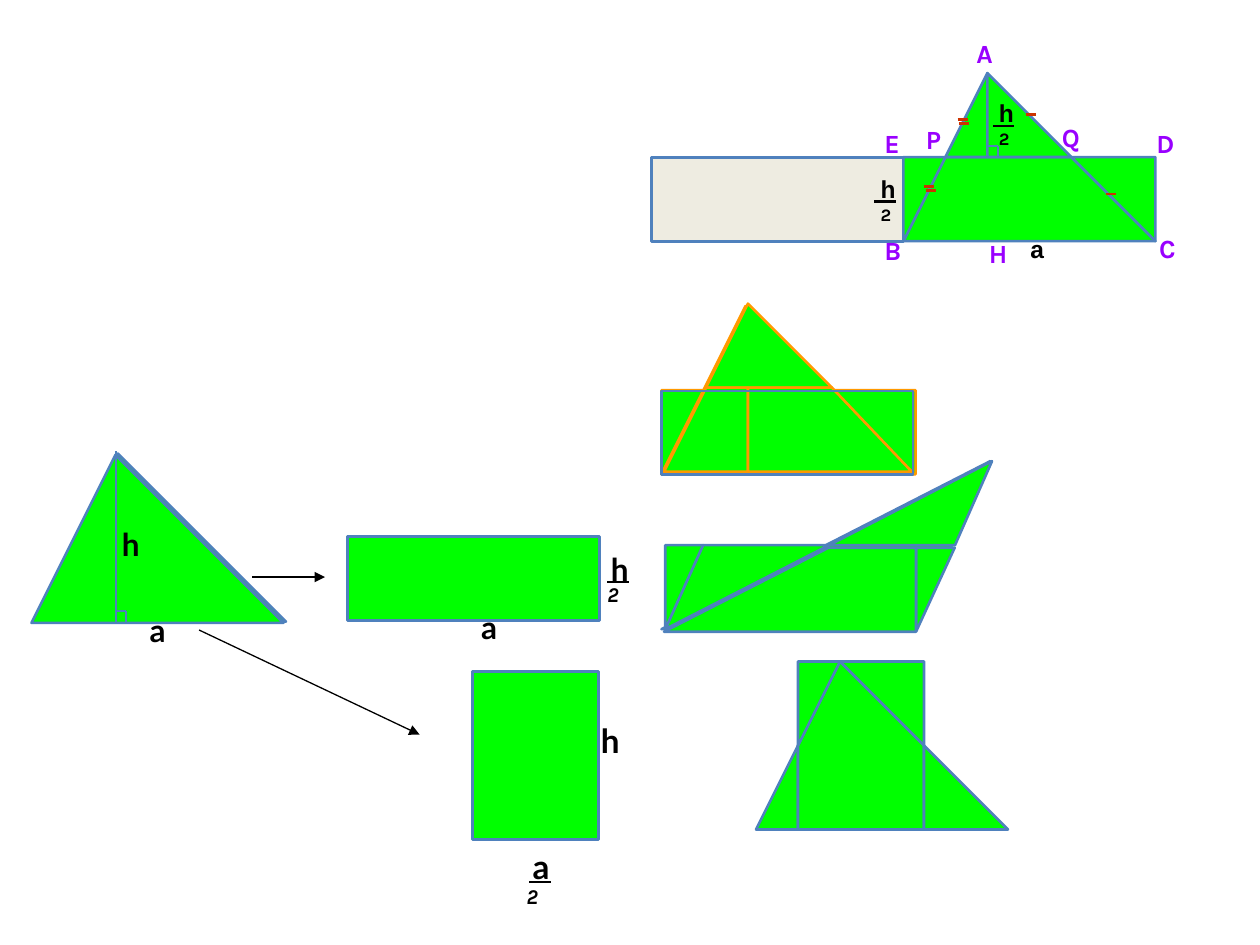
from lxml.etree import SubElement
from pptx import Presentation
from pptx.dml.color import RGBColor
from pptx.enum.shapes import MSO_CONNECTOR, MSO_SHAPE
from pptx.oxml.ns import qn
from pptx.util import Inches, Pt

GREEN = RGBColor(0x00, 0xFF, 0x00)
BLUE = RGBColor(0x4F, 0x81, 0xBD)
ORANGE = RGBColor(0xFF, 0x99, 0x00)
BEIGE = RGBColor(0xEE, 0xEC, 0xE1)
RUST = RGBColor(0xCC, 0x33, 0x00)
PURPLE = RGBColor(0x99, 0x00, 0xFF)
BLACK = RGBColor(0x00, 0x00, 0x00)

# Every figure is drawn on a grid of thirds of an inch: a = 6 cells, h = 4 cells
CELL = 1 / 3
TRIANGLE = [(0, 4), (2, 0), (6, 4)]

POINT_FONT = dict(name="Karla", size=Pt(15), bold=True)
SIDE_FONT = dict(name="Lato", size=Pt(18), bold=True)
LARGE_FONT = dict(SIDE_FONT, size=Pt(19))
SMALL_FONT = dict(name="Arial", size=Pt(14), bold=True)
TWO_FONT = dict(name="Karla", size=Pt(12), bold=True, italic=True)
SMALL_TWO_FONT = dict(name="Karla", size=Pt(10), bold=True)

# Origin and pieces of each dissected figure, in grid cells
LABELLED = [((7.17, 0.58), [
    [(1, 2), (0, 4), (6, 4), (4, 2)],
    [(1, 2), (2, 0), (2, 2)],
    [(1, 2), (0, 4), (0, 2)],
    [(6, 4), (6, 2), (4, 2)],
    [(2, 0), (2, 2), (4, 2)],
])]
OVERLAID = [
    ((5.25, 2.43), [
        [(6.05, 4), (6.05, 2), (1.9, 2), (3.9, 4)],
        [(0, 4), (1, 4), (1.9, 2), (0, 2)],
        [(1.9, 2), (0.9, 4), (3.9, 4)],
        TRIANGLE,
    ]),
    ((5.27, 2.41), [
        [(1, 2), (2, 0), (4, 2)],
        [(2, 2), (1, 2), (0, 4), (2, 4)],
        [(2, 4), (2, 2), (4, 2), (5.9, 4)],
    ]),
]
SLANTED = [
    ((5.25, 3.66), [[(0, 4), (7.83, 0), (6, 4)]]),
    ((5.27, 3.68), [
        [(6, 4), (6.92, 2), (6, 2)],
        [(0, 4), (3.92, 2), (6, 2), (6, 4)],
    ]),
    ((5.28, 3.66), [
        [(3.9, 2), (7.78, 0), (6.9, 2)],
        [(3.9, 2), (0, 4), (0.9, 2)],
        [(0, 4), (0.9, 2), (0, 2)],
    ]),
]
UPRIGHT = [((6, 5.25), [
    [(0, 4), (1, 2), (1, 4)],
    [(1, 4), (1, 2), (2, 0), (4, 2), (4, 4)],
    [(4, 2), (4, 4), (6, 4)],
    [(4, 2), (4, 0), (2, 0)],
    [(2, 0), (1, 2), (1, 0)],
])]

POINT_LABELS = [
    ("E", 6.92, 0.96), ("D", 9.08, 0.96), ("C", 9.1, 1.79), ("B", 6.92, 1.81),
    ("A", 7.65, 0.25), ("Q", 8.33, 0.91), ("P", 7.25, 0.93), ("H", 7.75, 1.83),
]
EQUAL_TICKS = [(7.6, 0.95), (7.61, 0.98), (7.33, 1.48), (7.35, 1.51),
               (8.78, 1.54), (8.14, 0.91)]

# Offsets of the two numbers are measured from the left end of the bar
LARGE_FRACTION = dict(top_font=SIDE_FONT, bottom_font=TWO_FONT, weight=1.25,
                      top_offset=(-0.07, -0.3), bottom_offset=(-0.1, -0.05))
SMALL_FRACTION = dict(top_font=SMALL_FONT, bottom_font=SMALL_TWO_FONT, weight=1.5,
                      top_offset=(-0.05, -0.27), bottom_offset=(-0.05, -0.03))
BASE_FRACTION = dict(top_font=LARGE_FONT, bottom_font=TWO_FONT, weight=0.75,
                     top_offset=(-0.07, -0.33), bottom_offset=(-0.12, -0.04), width=0.5)


def paint(shape, fill, line, weight):
    shape.shadow.inherit = False
    if fill is None:
        shape.fill.background()
    else:
        shape.fill.solid()
        shape.fill.fore_color.rgb = fill
    shape.line.color.rgb = line
    shape.line.width = Pt(weight)


def add_rectangle(slide, x, y, columns, rows, fill=GREEN, weight=1.5):
    shape = slide.shapes.add_shape(MSO_SHAPE.RECTANGLE, Inches(x), Inches(y),
                                   Inches(columns * CELL), Inches(rows * CELL))
    paint(shape, fill, BLUE, weight)


def add_polygon(slide, origin, corners, line=BLUE):
    points = [(Inches(origin[0] + column * CELL), Inches(origin[1] + row * CELL))
              for column, row in corners]
    builder = slide.shapes.build_freeform(*points[0])
    builder.add_line_segments(points[1:], close=True)
    paint(builder.convert_to_shape(), GREEN, line, 1.5)


def add_figure(slide, layers, line=BLUE):
    for origin, pieces in layers:
        for corners in pieces:
            add_polygon(slide, origin, corners, line)


def add_line(slide, start, end, color=BLUE, weight=1.5, arrow=False):
    connector = slide.shapes.add_connector(
        MSO_CONNECTOR.STRAIGHT, *(Inches(value) for value in (*start, *end)))
    connector.line.color.rgb = color
    connector.line.width = Pt(weight)
    if arrow:
        SubElement(connector.line._get_or_add_ln(), qn("a:tailEnd"), type="triangle")
    SubElement(connector._element.spPr, qn("a:effectLst"))


def add_label(slide, text, x, y, font, color=BLACK, width=0.33):
    height = 0.1 + font["size"].pt / 60
    box = slide.shapes.add_textbox(Inches(x), Inches(y), Inches(width), Inches(height))
    box.text_frame.word_wrap = True
    run = box.text_frame.paragraphs[0].add_run()
    run.text = text
    run.font.color.rgb = color
    for name, value in font.items():
        setattr(run.font, name, value)


def add_half(slide, letter, x, y, top_font, bottom_font, weight,
             top_offset, bottom_offset, width=0.33):
    parts = [(letter, top_font, top_offset), ("2", bottom_font, bottom_offset)]
    for text, font, (right, down) in parts:
        add_label(slide, text, x + right, y + down, font, width=width)
    add_line(slide, (x, y), (x + 0.17, y), BLACK, weight)


def add_right_angle(slide, x, y, size=0.09):
    add_line(slide, (x, y - size), (x + size, y - size))
    add_line(slide, (x + size, y - size), (x + size, y))


def main():
    presentation = Presentation()
    presentation.slide_width, presentation.slide_height = Inches(10), Inches(7.5)
    slide = presentation.slides.add_slide(presentation.slide_layouts[6])

    # Flat rectangle: base a, height h/2
    add_line(slide, (2, 4.58), (2.58, 4.58), BLACK, 0.75, arrow=True)
    add_rectangle(slide, 2.76, 4.26, 6, 2)
    add_label(slide, "a", 3.72, 4.78, SIDE_FONT)
    add_half(slide, "h", 4.82, 4.62, **LARGE_FRACTION)

    # Labelled proof at the top right
    add_rectangle(slide, 5.17, 1.25, 6, 2, fill=BEIGE)
    add_figure(slide, LABELLED)
    add_right_angle(slide, 7.83, 1.25)
    for x, y in EQUAL_TICKS:
        add_line(slide, (x, y), (x + 0.08, y), RUST)
    for letter, x, y in POINT_LABELS:
        add_label(slide, letter, x, y, POINT_FONT, PURPLE, width=0.42)
    add_label(slide, "a", 8.08, 1.81, SMALL_FONT)
    add_half(slide, "h", 6.94, 1.6, **SMALL_FRACTION)
    add_half(slide, "h", 7.88, 1, **SMALL_FRACTION)

    # Starting triangle: two stacked sheets, base a and height h
    for origin in ((0.27, 3.6), (0.25, 3.61)):
        add_polygon(slide, origin, TRIANGLE)
    add_line(slide, (0.92, 3.58), (0.92, 4.94), weight=0.75)
    add_right_angle(slide, 0.91, 4.94)
    add_label(slide, "a", 1.09, 4.8, SIDE_FONT)
    add_label(slide, "h", 0.87, 4.12, SIDE_FONT)

    # Cut triangles laid over rectangles
    add_figure(slide, OVERLAID, ORANGE)
    add_rectangle(slide, 5.25, 3.1, 6, 2, fill=None, weight=1.25)
    add_figure(slide, SLANTED)
    add_figure(slide, UPRIGHT)

    # Tall rectangle: base a/2, height h
    add_line(slide, (1.58, 5), (3.33, 5.83), BLACK, 0.75, arrow=True)
    add_polygon(slide, (3.75, 5.33), [(0, 4), (0, 0), (3, 0), (3, 4)])
    add_label(slide, "h", 4.67, 5.67, LARGE_FONT, width=0.5)
    add_half(slide, "a", 4.2, 7, **BASE_FRACTION)

    presentation.save("out.pptx")


if __name__ == "__main__":
    main()
